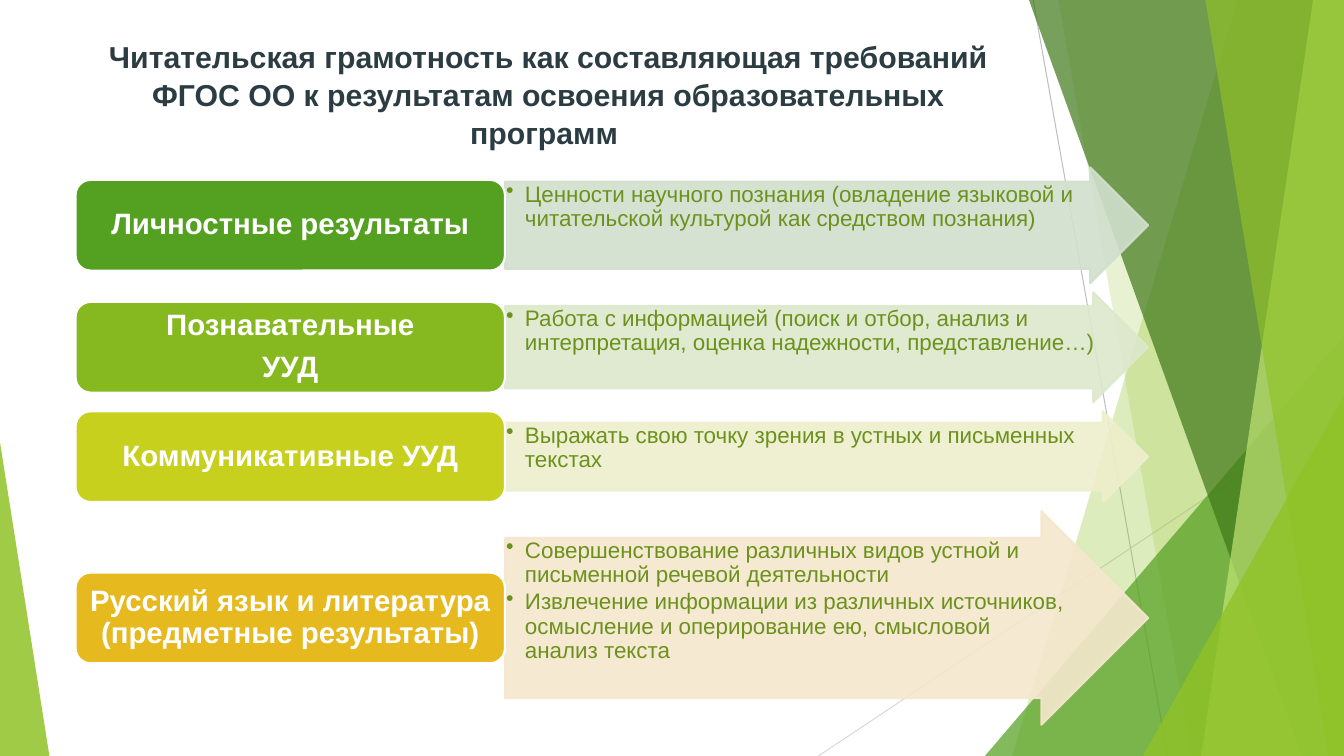
"""Build the slide on reading literacy within the education standard."""
from dataclasses import dataclass
from typing import Any

import lxml.etree
import pptx
import pptx.dml.color
import pptx.enum.shapes
import pptx.enum.text
import pptx.oxml.ns
import pptx.util

Pt = pptx.util.Pt
qn = pptx.oxml.ns.qn
SHAPES = pptx.enum.shapes.MSO_SHAPE
ALIGN = pptx.enum.text.PP_ALIGN
ANCHOR = pptx.enum.text.MSO_ANCHOR

WIDTH, HEIGHT = 960, 540
BUTTON_LEFT, BUTTON_WIDTH, BUTTON_HEIGHT = 54, 306.7, 64.8
ARROW_WIDTH = 459.4
ROWS_TOP, ROW_GAP = 119.5, 6.5
BULLET_INDENT = 13.5

COLORS = {
    "title": "2C3C43", "list": "6C921D", "white": "FFFFFF",
    "line_dark": "BFBFBF", "line_light": "D9D9D9",
    "lime": "90C226", "green": "54A021", "forest": "3F7819", "pale": "C0E474",
    "personal": "54A021", "personal_arrow": "D1DFCD",
    "cognitive": "86B820", "cognitive_arrow": "DCE8CC",
    "social": "C7D01D", "social_arrow": "EEEFCC",
    "subject": "E6B91E", "subject_arrow": "F5E7CD",
}


@dataclass(frozen=True)
class Ray:
    """A thin background line."""
    start: tuple[float, float]
    end: tuple[float, float]
    color: str


@dataclass(frozen=True)
class Band:
    """A translucent band from a slanted edge to the right side."""
    top_x: int
    bottom_x: int
    color: str
    opacity: int


@dataclass(frozen=True)
class Corner:
    """A translucent right triangle standing on the bottom edge."""
    left: float
    width: float
    height: float
    apex: float
    color: str
    opacity: int


@dataclass(frozen=True)
class TextStyle:
    """Formats of a text frame, its paragraphs and their font."""
    frame: dict[str, Any]
    paragraph: dict[str, Any]
    font: dict[str, Any]
    color: str
    bulleted: bool = False


@dataclass(frozen=True)
class Result:
    """A result group: a button and the arrow that explains it."""
    color: str
    arrow_height: float
    labels: list[str]
    points: list[str]


DECORATION = [
    Ray((738, 0), (834, 540), "line_dark"),
    Ray((960, 290), (584.6, 540), "line_light"),
    Band(884, 723, "lime", 30),
    Band(756, 851, "lime", 20),
    Corner(703.5, 256.5, 300.2, 1, "green", 72),
    Band(735, 930, "forest", 70),
    Band(938, 858, "pale", 70),
    Band(861, 949, "lime", 65),
    Corner(816.5, 143.5, 257, 1, "lime", 80),
    Corner(0, 35.3, 224, 0, "lime", 85),
]

RESULTS = [
    Result("personal", 82.8, ["Личностные результаты"],
           ["Ценности научного познания (овладение языковой и читательской культурой как средством познания)"]),
    Result("cognitive", 78.5, ["Познавательные", "УУД"],
           ["Работа с информацией (поиск и отбор, анализ и интерпретация, оценка надежности, представление…)"]),
    Result("social", 64.8, ["Коммуникативные УУД"],
           ["Выражать свою точку зрения в устных и письменных текстах"]),
    Result("subject", 152.6, ["Русский язык и литература (предметные результаты)"],
           ["Совершенствование различных видов устной и письменной речевой деятельности",
            "Извлечение информации из различных источников, осмысление и оперирование ею, смысловой анализ текста"]),
]

TITLE = "Читательская грамотность как составляющая требований ФГОС ОО к результатам освоения образовательных программ "

TITLE_STYLE = TextStyle(
    {"word_wrap": True, "vertical_anchor": ANCHOR.TOP, "auto_size": pptx.enum.text.MSO_AUTO_SIZE.NONE},
    {"alignment": ALIGN.CENTER, "line_spacing": 1.05},
    {"name": "Arial", "size": Pt(21.6), "bold": True}, "title")
LABEL_STYLE = TextStyle(
    {"word_wrap": True, "vertical_anchor": ANCHOR.MIDDLE, "margin_left": Pt(6.3),
     "margin_right": Pt(6.3), "margin_top": Pt(3.15), "margin_bottom": Pt(3.15)},
    {"alignment": ALIGN.CENTER, "line_spacing": 0.9, "space_after": Pt(7.35)},
    {"name": "Arial", "size": Pt(21), "bold": True}, "white")
LIST_STYLE = TextStyle(
    {"word_wrap": True, "vertical_anchor": ANCHOR.TOP, "margin_left": Pt(0.8),
     "margin_right": Pt(0.8), "margin_top": Pt(0.8), "margin_bottom": Pt(0.8)},
    {"alignment": ALIGN.LEFT, "level": 1, "line_spacing": 0.9, "space_after": Pt(2.4)},
    {"name": "Arial", "size": Pt(16), "bold": False}, "list", bulleted=True)


def rgb(name: str) -> pptx.dml.color.RGBColor:
    """Return the named colour."""
    return pptx.dml.color.RGBColor.from_string(COLORS[name])


def apply_format(target: Any, values: dict[str, Any]) -> None:
    """Set each attribute of the target from the format values."""
    for name, value in values.items():
        setattr(target, name, value)


def write_text(shape: Any, texts: list[str], style: TextStyle) -> None:
    """Write one styled paragraph per text into the shape."""
    frame = shape.text_frame
    frame.text = "\n".join(texts)
    apply_format(frame, style.frame)
    for paragraph in frame.paragraphs:
        apply_format(paragraph, style.paragraph)
        for run in paragraph.runs:
            apply_format(run.font, style.font)
            run.font.color.rgb = rgb(style.color)
        if style.bulleted:
            properties = paragraph._p.get_or_add_pPr()
            properties.set("marL", str(Pt(BULLET_INDENT)))
            properties.set("indent", str(-Pt(BULLET_INDENT)))
            lxml.etree.SubElement(properties, qn("a:buChar"), char="•")


def paint(shape: Any, fill: str, line: str | None = None, opacity: int = 100) -> None:
    """Give the shape a fill, an optional outline and an opacity."""
    shape.shadow.inherit = False
    shape.fill.solid()
    shape.fill.fore_color.rgb = rgb(fill)
    if line:
        shape.line.color.rgb = rgb(line)
        shape.line.width = Pt(1.5)
    else:
        shape.line.fill.background()
    if opacity < 100:
        for color in shape.element.spPr.iter(qn("a:srgbClr")):
            lxml.etree.SubElement(color, qn("a:alpha"), val=str(opacity * 1000))


def draw_decoration(slide: Any, item: Ray | Band | Corner) -> None:
    """Draw one piece of the background."""
    if isinstance(item, Ray):
        connector = slide.shapes.add_connector(
            pptx.enum.shapes.MSO_CONNECTOR.STRAIGHT, *map(Pt, item.start + item.end))
        connector.line.color.rgb = rgb(item.color)
        connector.line.width = Pt(0.75)
        lxml.etree.SubElement(connector.element.spPr, qn("a:effectLst"))
        return
    if isinstance(item, Band):
        builder = slide.shapes.build_freeform(item.top_x, 0, scale=Pt(1))
        builder.add_line_segments([(WIDTH, 0), (WIDTH, HEIGHT), (item.bottom_x, HEIGHT)])
        shape = builder.convert_to_shape()
    else:
        shape = slide.shapes.add_shape(
            SHAPES.ISOSCELES_TRIANGLE, Pt(item.left), Pt(HEIGHT - item.height),
            Pt(item.width), Pt(item.height))
        shape.adjustments[0] = item.apex
    paint(shape, item.color, opacity=item.opacity)


def draw_result(slide: Any, result: Result, top: float) -> None:
    """Draw the arrow and, centred on it, the button."""
    arrow = slide.shapes.add_shape(
        SHAPES.RIGHT_ARROW, Pt(BUTTON_LEFT + BUTTON_WIDTH), Pt(top), Pt(ARROW_WIDTH), Pt(result.arrow_height))
    arrow.adjustments[0] = 0.75
    paint(arrow, f"{result.color}_arrow", f"{result.color}_arrow", 90)
    write_text(arrow, result.points, LIST_STYLE)
    button = slide.shapes.add_shape(
        SHAPES.ROUNDED_RECTANGLE, Pt(BUTTON_LEFT), Pt(top + (result.arrow_height - BUTTON_HEIGHT) / 2),
        Pt(BUTTON_WIDTH), Pt(BUTTON_HEIGHT))
    paint(button, result.color, "white")
    write_text(button, result.labels, LABEL_STYLE)


def main() -> None:
    """Build and save the presentation."""
    presentation = pptx.Presentation()
    apply_format(presentation, {"slide_width": Pt(WIDTH), "slide_height": Pt(HEIGHT)})
    slide = presentation.slides.add_slide(presentation.slide_layouts.get_by_name("Title Only"))
    for item in DECORATION:
        draw_decoration(slide, item)
    title = slide.shapes.title
    apply_format(title, {"left": Pt(53.3), "top": Pt(22.3), "width": Pt(676.8), "height": Pt(90.7)})
    write_text(title, [TITLE], TITLE_STYLE)
    top = ROWS_TOP
    for result in RESULTS:
        draw_result(slide, result, top)
        top += result.arrow_height + ROW_GAP
    presentation.save("out.pptx")


if __name__ == "__main__":
    main()
